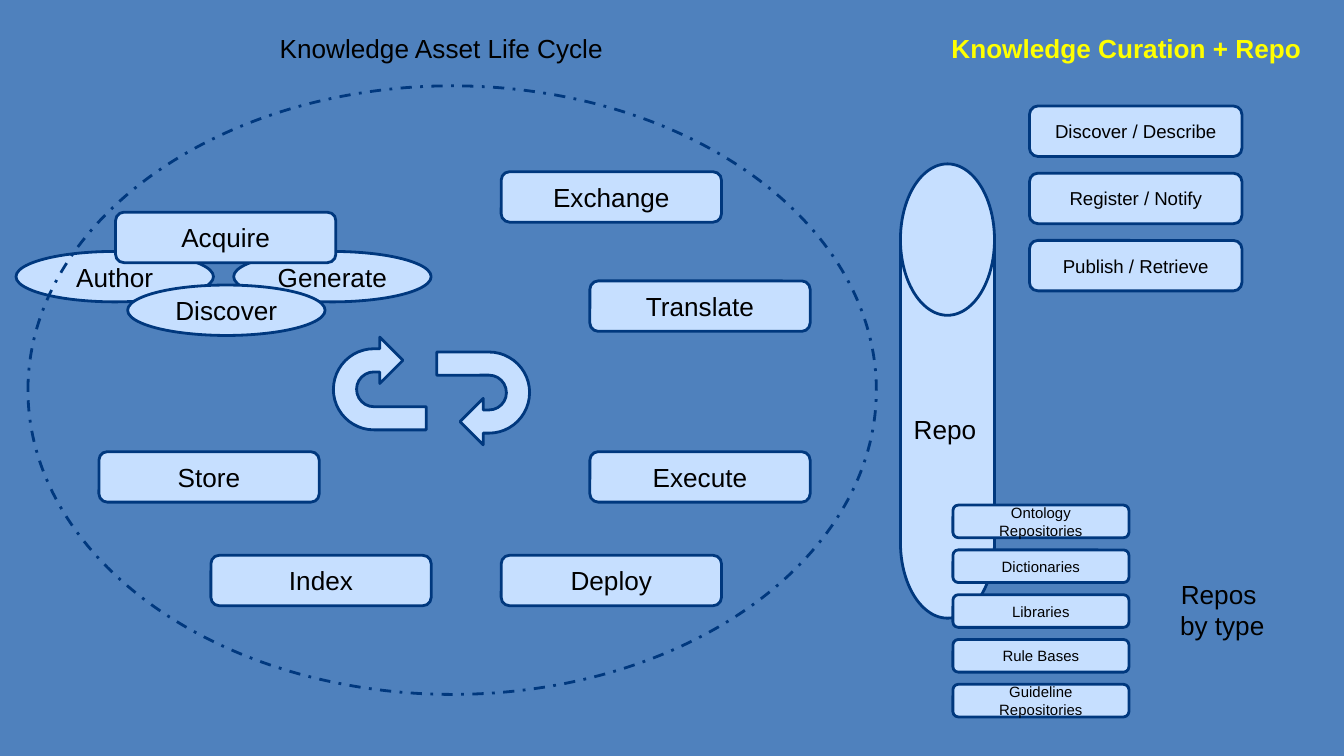
from dataclasses import dataclass

from pptx import Presentation
from pptx.dml.color import RGBColor
from pptx.enum.dml import MSO_LINE
from pptx.enum.shapes import MSO_SHAPE
from pptx.enum.text import MSO_ANCHOR, MSO_AUTO_SIZE, PP_ALIGN
from pptx.util import Pt

ROUND = MSO_SHAPE.ROUNDED_RECTANGLE
OVAL = MSO_SHAPE.FLOWCHART_CONNECTOR
RING = MSO_SHAPE.OVAL
DISK = MSO_SHAPE.FLOWCHART_MAGNETIC_DISK
TURN = MSO_SHAPE.U_TURN_ARROW
DASH = MSO_LINE.DASH_DOT
TOP, MIDDLE = MSO_ANCHOR.TOP, MSO_ANCHOR.MIDDLE
LEFT, CENTER = PP_ALIGN.LEFT, PP_ALIGN.CENTER
FIXED = MSO_AUTO_SIZE.NONE


@dataclass(frozen=True)
class Theme:
    back: RGBColor = RGBColor(0x4F, 0x81, 0xBD)
    fill: RGBColor = RGBColor(0xC6, 0xDF, 0xFF)
    edge: RGBColor = RGBColor(0x00, 0x38, 0x7E)
    ink: RGBColor = RGBColor(0x00, 0x00, 0x00)
    accent: RGBColor = RGBColor(0xFF, 0xFF, 0x00)
    font: str = "Arial"
    large: float = 14
    mid: float = 10
    small: float = 8
    line: float = 1.5
    inset: float = 7.2


THEME = Theme()


def write(shape, text, size=THEME.large, color=THEME.ink, bold=False,
          align=CENTER, anchor=MIDDLE):
    """Fill the shape's single paragraph, one run per line of text."""
    frame = shape.text_frame
    frame.word_wrap = True
    frame.auto_size = FIXED
    frame.vertical_anchor = anchor
    frame.margin_left = frame.margin_right = Pt(THEME.inset)
    frame.margin_top = frame.margin_bottom = Pt(THEME.inset)
    para = frame.paragraphs[0]
    para.alignment = align
    for index, line in enumerate(text.split("\n")):
        if index:
            para.add_line_break()
        run = para.add_run()
        run.text = line
        font = run.font
        font.name, font.size, font.bold = THEME.font, Pt(size), bold
        font.color.rgb = color


def draw(shapes, kind, box, text="", filled=True, **style):
    shape = shapes.add_shape(kind, *map(Pt, box))
    shape.shadow.inherit = False
    if filled:
        shape.fill.solid()
        shape.fill.fore_color.rgb = THEME.fill
    else:
        shape.fill.background()
    shape.line.color.rgb = THEME.edge
    shape.line.width = Pt(THEME.line)
    if text:
        write(shape, text, **style)
    return shape


def label(shapes, box, text, **style):
    write(shapes.add_textbox(*map(Pt, box)), text, anchor=TOP, **style)


def stack(shapes, box, pitch, names, size):
    """Repeat a rounded box downwards, one for each name."""
    x, y, w, h = box
    for row, name in enumerate(names):
        draw(shapes, ROUND, (x, y + row * pitch, w, h), name, size=size)


def sources(shapes, x, y):
    """Group the ways in which knowledge is acquired."""
    group = shapes.add_group_shape().shapes
    for name, dx, dy in (("Author", 0, 21), ("Generate", 116.6, 21),
                         ("Discover", 59.8, 39)):
        draw(group, OVAL, (x + dx, y + dy, 105.8, 27), name)
    draw(group, ROUND, (x + 53.3, y, 118, 27), "Acquire")


def arrows(shapes, x, y):
    group = shapes.add_group_shape().shapes
    for dx, dy, angle in ((0, 0, 270), (55.4, 8, 90)):
        turn = draw(group, TURN, (x + dx, y + dy, 49.7, 49.7))
        turn.rotation = angle


def cycle(slide, box):
    x, y, w, h = box
    shapes = slide.shapes
    title = shapes.title
    title.left, title.top = Pt(x + 127.6), Pt(y - 36)
    title.width, title.height = Pt(204), Pt(34.6)
    write(title, "Knowledge Asset Life Cycle", align=LEFT, anchor=TOP)

    nodes = (("Exchange", 253.5, 46), ("Translate", 301, 104.5),
             ("Execute", 301, 196), ("Deploy", 253.5, 251.5),
             ("Index", 98, 251.5), ("Store", 38, 196))
    for name, dx, dy in nodes:
        draw(shapes, ROUND, (x + dx, y + dy, 118, 27), name)
    sources(shapes, x - 6.4, y + 67.7)
    arrows(shapes, x + 163.6, y + 134.6)
    ring = draw(shapes, RING, box, filled=False)
    ring.line.dash_style = DASH


def curation(slide, box):
    x, y, w, h = box
    shapes = slide.shapes
    label(shapes, (x + 20.2, y, 208, 34.6), "Knowledge Curation + Repo",
          color=THEME.accent, bold=True, align=LEFT)
    draw(shapes, DISK, (x, y + 77.8, 50.4, 243.4), "Repo", align=LEFT)
    stack(shapes, (x + 69.1, y + 46.8, 113.8, 27), 36,
          ("Discover / Describe", "Register / Notify",
           "Publish / Retrieve"), THEME.mid)
    stack(shapes, (x + 28.1, y + 260.6, 94.3, 17.5), 24,
          ("Ontology Repositories", "Dictionaries", "Libraries",
           "Rule Bases", "Guideline Repositories"), THEME.small)
    label(shapes, (x + 141.8, y + 292.4, 61.2, 34.6), "Repos \nby type")


def main():
    deck = Presentation()
    deck.slide_width, deck.slide_height = Pt(720), Pt(405)
    slide = deck.slides.add_slide(deck.slide_layouts.get_by_name("Title Only"))
    slide.background.fill.solid()
    slide.background.fill.fore_color.rgb = THEME.back
    cycle(slide, (15, 46, 454.5, 326))
    curation(slide, (482.4, 10, 228, 374))
    deck.save("out.pptx")


if __name__ == "__main__":
    main()
